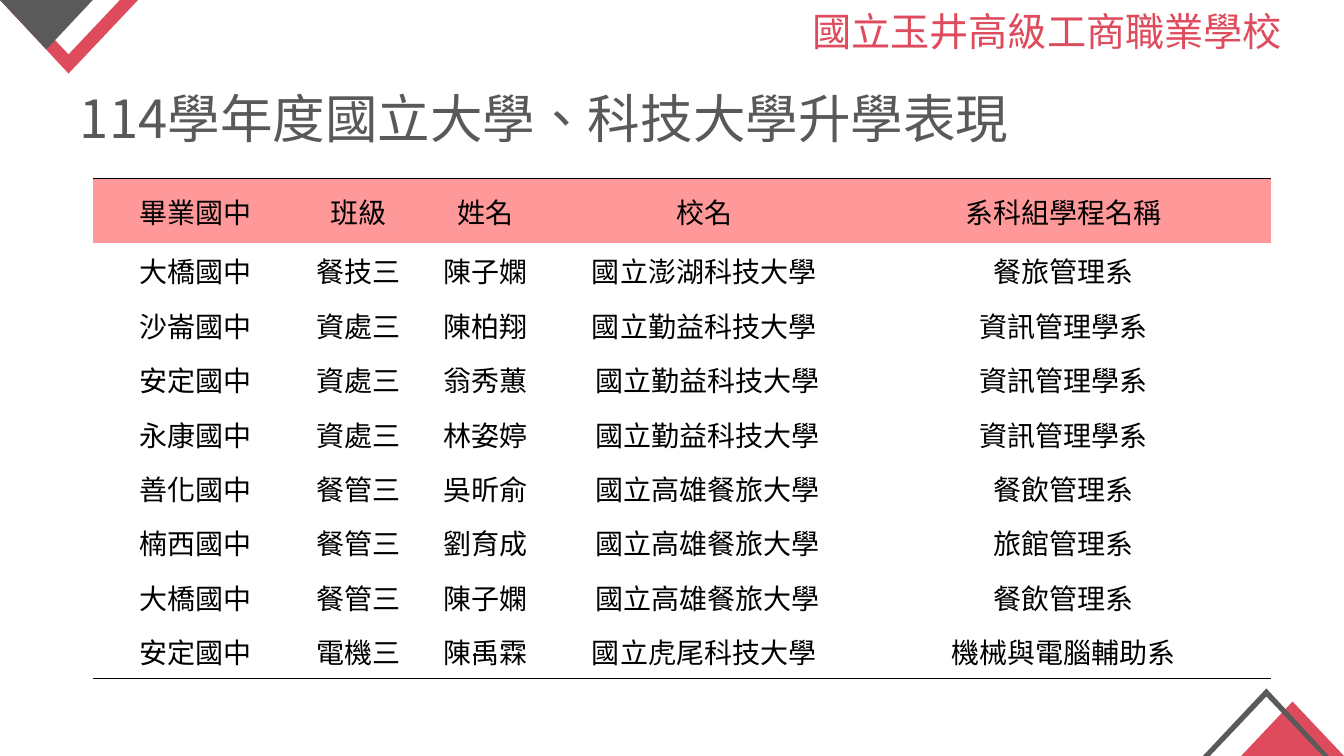
"""Build the slide on university admissions of the 114 school year."""
from lxml.etree import SubElement
from pptx import Presentation
from pptx.dml.color import RGBColor
from pptx.enum.lang import MSO_LANGUAGE_ID
from pptx.enum.text import MSO_ANCHOR, MSO_AUTO_SIZE, PP_ALIGN
from pptx.oxml.ns import qn
from pptx.util import Pt

PX = 9144
FONT = "Noto Sans CJK SC"
COLORS = {"red": "DE4B5D", "dark": "5A5A5A", "title": "595959",
          "head": "FF9999", "black": "000000"}


def write(tf, text, size, color, **frame):
    for name, value in frame.items():
        setattr(tf, name, value)
    p = tf.paragraphs[0]
    p.alignment = PP_ALIGN.CENTER
    r = p.add_run()
    r.text = text
    look = {"name": FONT, "size": Pt(size), "bold": False,
            "language_id": MSO_LANGUAGE_ID.TRADITIONAL_CHINESE}
    for name, value in look.items():
        setattr(r.font, name, value)
    r.font.color.rgb = RGBColor.from_string(COLORS[color])
    SubElement(r.font._element, qn("a:ea"), typeface=FONT)
    return p


def set_border(cell, side, visible):
    ln = SubElement(cell._tc.get_or_add_tcPr(), qn(f"a:ln{side}"), w=str(Pt(1)))
    if visible:
        fill = SubElement(ln, qn("a:solidFill"))
        SubElement(fill, qn("a:srgbClr"), val=COLORS["black"])
    else:
        SubElement(ln, qn("a:noFill"))


prs = Presentation()
prs.slide_width, prs.slide_height = 1333 * PX, 750 * PX
s = prs.slides.add_slide(prs.slide_layouts[5])

corners = [
    ("red", [(68, 73), (137, 0), (119, 0), (68, 54), (17, 0), (0, 0)]),
    ("dark", [(46, 49), (92, 0), (0, 0)]),
    ("red", [(1282, 696), (1231, 750), (1333, 750)]),
    ("dark", [(1318, 750), (1312, 750), (1256, 691), (1200, 750),
              (1193, 750), (1256, 683)]),
]
for color, points in corners:
    builder = s.shapes.build_freeform(*points[0], scale=PX)
    builder.add_line_segments(points[1:], close=True)
    sp = builder.convert_to_shape()
    sp.shadow.inherit = False
    sp.fill.solid()
    sp.fill.fore_color.rgb = RGBColor.from_string(COLORS[color])
    sp.line.fill.background()

school = s.shapes.add_textbox(748 * PX, 2 * PX, 581 * PX, 57 * PX)
write(school.text_frame, "國立玉井高級工商職業學校", 28, "red",
      word_wrap=True, auto_size=MSO_AUTO_SIZE.SHAPE_TO_FIT_TEXT)

title = s.shapes.title
place = {"left": 26, "top": 49, "width": 1028, "height": 102}
for name, value in place.items():
    setattr(title, name, value * PX)
p = write(title.text_frame, "114學年度國立大學、科技大學升學表現", 37.5, "title",
          word_wrap=True, auto_size=MSO_AUTO_SIZE.NONE,
          vertical_anchor=MSO_ANCHOR.BOTTOM)
p.line_spacing = 0.7

rows = [
    ("畢業國中", "班級", "姓名", "校名", "系科組學程名稱"),
    ("大橋國中", "餐技三", "陳子嫻", "國立澎湖科技大學", "餐旅管理系"),
    ("沙崙國中", "資處三", "陳柏翔", "國立勤益科技大學", "資訊管理學系"),
    ("安定國中", "資處三", "翁秀蕙", " 國立勤益科技大學", "資訊管理學系"),
    ("永康國中", "資處三", "林姿婷", " 國立勤益科技大學", "資訊管理學系"),
    ("善化國中", "餐管三", "吳昕俞", " 國立高雄餐旅大學", "餐飲管理系"),
    ("楠西國中", "餐管三", "劉育成", " 國立高雄餐旅大學", "旅館管理系"),
    ("大橋國中", "餐管三", "陳子嫻", " 國立高雄餐旅大學", "餐飲管理系"),
    ("安定國中", "電機三", "陳禹霖", "國立虎尾科技大學", "機械與電腦輔助系"),
]
widths = [204, 120, 132, 301, 412]
heights = [64] + [54] * 8
table = s.shapes.add_table(len(rows), len(widths), 92 * PX, 177 * PX,
                           sum(widths) * PX, sum(heights) * PX).table
for column, width in zip(table.columns, widths):
    column.width = width * PX
for i, (row, height) in enumerate(zip(rows, heights)):
    table.rows[i].height = height * PX
    for j, text in enumerate(row):
        cell = table.cell(i, j)
        layout = {"margin_left": PX, "margin_right": PX, "margin_top": PX,
                  "margin_bottom": 0, "vertical_anchor": MSO_ANCHOR.MIDDLE}
        for name, value in layout.items():
            setattr(cell, name, value)
        write(cell.text_frame, text, 20, "black")
        for side in "LRTB":
            set_border(cell, side, (side, i) in (("T", 0), ("B", len(rows) - 1)))
        if i == 0:
            cell.fill.solid()
            cell.fill.fore_color.rgb = RGBColor.from_string(COLORS["head"])
        else:
            cell.fill.background()

prs.save("out.pptx")
